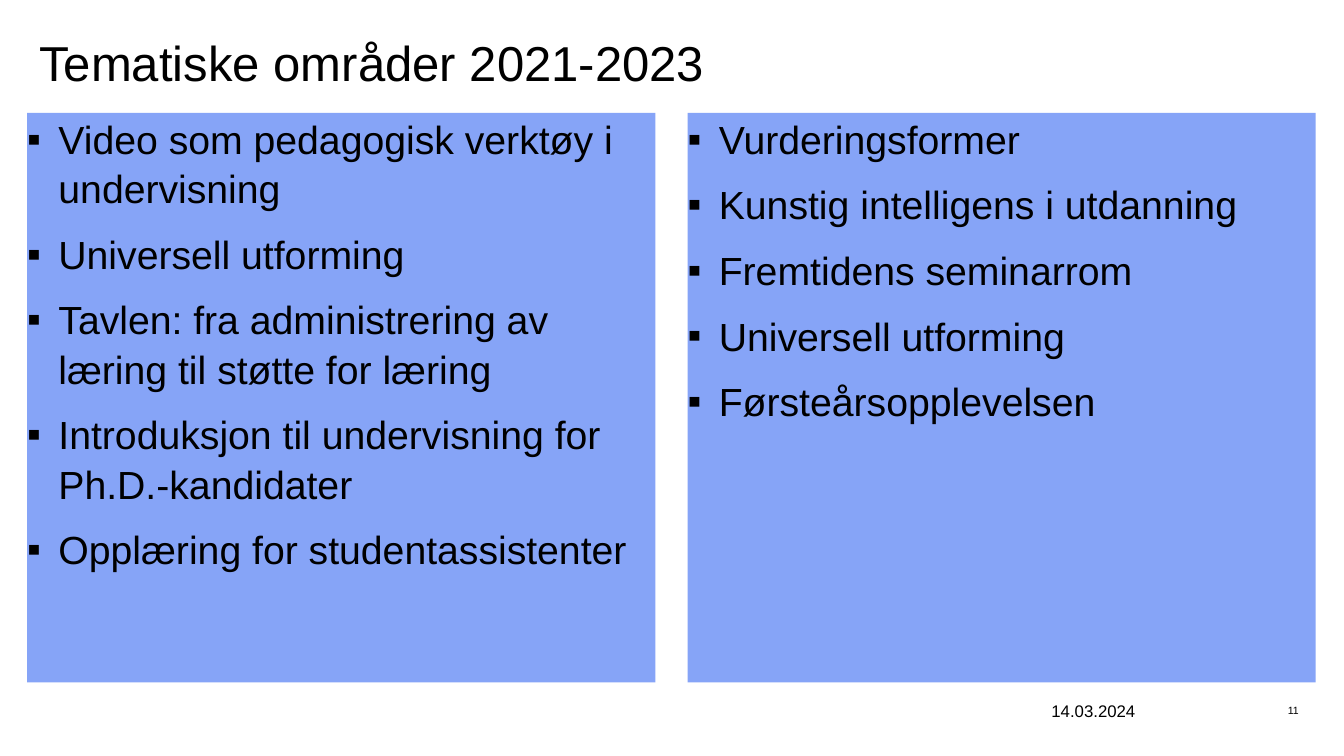
from pptx import Presentation, util as u
from pptx.dml import color
from pptx.enum import shapes, text
from pptx.oxml import parse_xml
from pptx.oxml import ns

INDENT = 0.31
TOP, WIDTH, HEIGHT = 1.12, 6.23, 5.65
FIRST_LEFT, COLUMN_STEP = 0.27, 6.55

columns = [
    [
        "Video som pedagogisk verktøy i undervisning",
        "Universell utforming",
        "Tavlen: fra administrering av læring til støtte for læring",
        "Introduksjon til undervisning for Ph.D.-kandidater",
        "Opplæring for studentassistenter",
    ],
    [
        "Vurderingsformer",
        "Kunstig intelligens i utdanning",
        "Fremtidens seminarrom",
        "Universell utforming",
        "Førsteårsopplevelsen",
    ],
]


def rgb(value):
    return color.RGBColor.from_string(value)


def add_run(paragraph, words, size):
    run = paragraph.add_run()
    run.text = words
    run.font.name = "Arial"
    run.font.size = u.Pt(size)
    run.font.color.rgb = rgb("000000")


presentation = Presentation()
presentation.slide_width = u.Inches(13.33)
presentation.slide_height = u.Inches(7.5)
slide = presentation.slides.add_slide(presentation.slide_layouts[5])

title = slide.shapes.title
title.left, title.top = u.Inches(0.39), u.Inches(0.39)
title.width, title.height = u.Inches(12.55), u.Inches(0.59)
frame = title.text_frame
frame.margin_left = frame.margin_right = frame.margin_top = frame.margin_bottom = 0
frame.vertical_anchor = text.MSO_ANCHOR.TOP
frame.auto_size = text.MSO_AUTO_SIZE.NONE
paragraph = frame.paragraphs[0]
paragraph.alignment = text.PP_ALIGN.LEFT
paragraph.line_spacing = 0.9
add_run(paragraph, "Tematiske områder 2021-2023", 35)

for column, topics in enumerate(columns):
    panel = slide.shapes.add_shape(
        shapes.MSO_SHAPE.RECTANGLE,
        u.Inches(FIRST_LEFT + column * COLUMN_STEP), u.Inches(TOP),
        u.Inches(WIDTH), u.Inches(HEIGHT))
    panel.shadow.inherit = False
    panel.fill.solid()
    panel.fill.fore_color.rgb = rgb("86A4F7")
    panel.line.fill.background()
    frame = panel.text_frame
    frame.word_wrap = True
    frame.vertical_anchor = text.MSO_ANCHOR.TOP
    frame.margin_left = frame.margin_right = frame.margin_top = frame.margin_bottom = 0
    for row, topic in enumerate(topics):
        paragraph = frame.add_paragraph() if row else frame.paragraphs[0]
        paragraph.alignment = text.PP_ALIGN.LEFT
        paragraph.line_spacing = 1.05
        paragraph.space_before = u.Pt(11.5 if row else 0)
        properties = paragraph._p.get_or_add_pPr()
        properties.set("marL", str(u.Inches(INDENT)))
        properties.set("indent", str(-u.Inches(INDENT)))
        for bullet in ('<a:buClr %s><a:srgbClr val="000000"/></a:buClr>',
                       '<a:buFont %s typeface="Arial"/>',
                       '<a:buChar %s char="▪"/>'):
            properties.append(parse_xml(bullet % ns.nsdecls("a")))
        add_run(paragraph, topic, 28)

footers = [
    ("14.03.2024", 10.33, 3, 12, text.PP_ALIGN.LEFT),
    ("11", 12.32, 0.66, 7.5, text.PP_ALIGN.RIGHT),
]
for words, left, width, size, alignment in footers:
    footer = slide.shapes.add_textbox(
        u.Inches(left), u.Inches(6.85), u.Inches(width), u.Inches(0.4))
    frame = footer.text_frame
    frame.word_wrap = True
    frame.vertical_anchor = text.MSO_ANCHOR.MIDDLE
    paragraph = frame.paragraphs[0]
    paragraph.alignment = alignment
    add_run(paragraph, words, size)

presentation.save("out.pptx")
